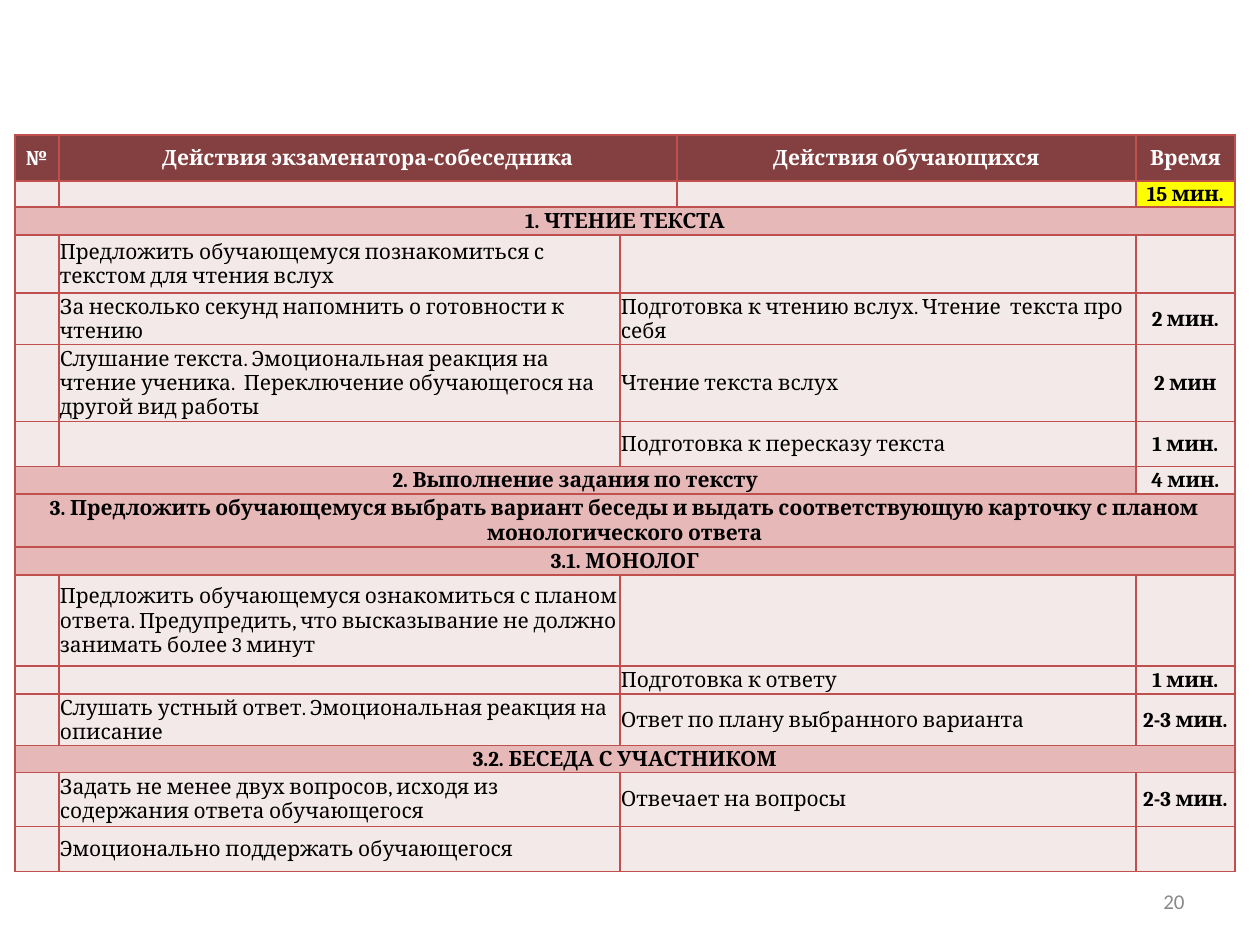
from typing import NamedTuple

from lxml.etree import SubElement
from pptx import Presentation
from pptx.dml.color import RGBColor as Rgb
from pptx.enum.text import MSO_ANCHOR as Anchor, PP_ALIGN as Align
from pptx.oxml.ns import qn
from pptx.util import Emu, Pt

SCALE = 914400 // 126
COLOR = {"head": "844040", "band": "E6B9B8", "pale": "F4E9E9", "mark": "FFFF00",
         "line": "C0504D", "white": "FFFFFF", "black": "000000", "gray": "898989"}
COLS = (44, 561, 57, 459, 99)


class Kind(NamedTuple):
    spans: tuple[tuple[int, int], ...]
    fills: tuple[str, ...]
    ink: str = "black"
    left: tuple[int, ...] = ()


class Row(NamedTuple):
    high: int
    kind: Kind
    texts: tuple[str, ...]


WIDE = ((0, 0), (1, 2), (3, 3), (4, 4))
HEAD = Kind(WIDE, ("head",) * 4, "white")
TOTAL = Kind(WIDE, ("pale", "pale", "pale", "mark"))
BAND = Kind(((0, 4),), ("band",))
TASK = Kind(((0, 3), (4, 4)), ("band", "pale"))
STEP = Kind(((0, 0), (1, 1), (2, 3), (4, 4)), ("pale",) * 4, left=(1, 2))

ROWS = (
    Row(46, HEAD, ("№", "Действия экзаменатора-собеседника", "Действия обучающихся", "Время")),
    Row(25, TOTAL, ("", "", "", "15 мин.")),
    Row(28, BAND, ("1. ЧТЕНИЕ ТЕКСТА",)),
    Row(58, STEP, ("", "Предложить обучающемуся познакомиться с текстом для чтения вслух", "", "")),
    Row(49, STEP, ("", "За несколько секунд напомнить о готовности к чтению",
                   "Подготовка к чтению вслух. Чтение  текста про себя", "2 мин.")),
    Row(74, STEP, ("", "Слушание текста. Эмоциональная реакция на чтение ученика.  "
                   "Переключение обучающегося на другой вид работы",
                   "Чтение текста вслух", "2 мин")),
    Row(45, STEP, ("", "", "Подготовка к пересказу текста", "1 мин.")),
    Row(28, TASK, ("2. Выполнение задания по тексту", "4 мин.")),
    Row(53, BAND, ("3. Предложить обучающемуся выбрать вариант беседы и выдать "
                   "соответствующую карточку с планом монологического ответа",)),
    Row(28, BAND, ("3.1. МОНОЛОГ",)),
    Row(91, STEP, ("", "Предложить обучающемуся ознакомиться с планом ответа. "
                   "Предупредить, что высказывание не должно занимать более 3 минут", "", "")),
    Row(28, STEP, ("", "", "Подготовка к ответу", "1 мин.")),
    Row(49, STEP, ("", "Слушать устный ответ. Эмоциональная реакция на описание",
                   "Ответ по плану выбранного варианта", "2-3 мин.")),
    Row(27, BAND, ("3.2. БЕСЕДА С УЧАСТНИКОМ",)),
    Row(54, STEP, ("", "Задать не менее двух вопросов, исходя из содержания ответа обучающегося",
                   "Отвечает на вопросы", "2-3 мин.")),
    Row(45, STEP, ("", "Эмоционально поддержать обучающегося", "", "")),
)


def px(count: int) -> Emu:
    return Emu(count * SCALE)


def write(para, text: str, face: str, ink: str, bold: bool, align: Align) -> None:
    para.text = text
    para.alignment = align
    for run in para.runs:
        font = run.font
        font.name, font.size, font.bold = face, Pt(12), bold
        font.color.rgb = Rgb.from_string(COLOR[ink])
    if not text:
        SubElement(para._p, qn("a:endParaRPr"), sz="1200")


def frame(cell) -> None:
    props = cell._tc.get_or_add_tcPr()
    for side in ("lnL", "lnR", "lnT", "lnB"):
        line = SubElement(props, qn(f"a:{side}"), w=str(Pt(1)))
        fill = SubElement(line, qn("a:solidFill"))
        SubElement(fill, qn("a:srgbClr"), val=COLOR["line"])


def paint(cell, fill: str) -> None:
    frame(cell)
    cell.fill.solid()
    cell.fill.fore_color.rgb = Rgb.from_string(COLOR[fill])
    cell.vertical_anchor = Anchor.MIDDLE
    cell.margin_left = cell.margin_right = cell.margin_top = px(1)
    cell.margin_bottom = 0


def fill_row(table, index: int, row: Row) -> None:
    table.rows[index].height = px(row.high)
    kind = row.kind
    for slot, ((first, last), fill, text) in enumerate(zip(kind.spans, kind.fills, row.texts)):
        for col in range(first, last + 1):
            paint(table.cell(index, col), fill)
            if col > first:
                write(table.cell(index, col).text_frame.paragraphs[0], "", "Cambria",
                      kind.ink, False, Align.LEFT)
        cell = table.cell(index, first)
        if last > first:
            cell.merge(table.cell(index, last))
        plain = slot in kind.left
        write(cell.text_frame.paragraphs[0], text, "Cambria", kind.ink, not plain,
              Align.LEFT if plain else Align.CENTER)


def add_plan(slide) -> None:
    high = sum(row.high for row in ROWS)
    table = slide.shapes.add_table(len(ROWS), len(COLS), px(15), px(135),
                                   px(sum(COLS)), px(high)).table
    table.first_row = table.horz_banding = False
    for col, wide in zip(table.columns, COLS):
        col.width = px(wide)
    for index, row in enumerate(ROWS):
        fill_row(table, index, row)


def add_page(slide) -> None:
    text = slide.shapes.add_textbox(px(903), px(876), px(294), px(50)).text_frame
    text.word_wrap = True
    text.vertical_anchor = Anchor.MIDDLE
    write(text.paragraphs[0], "20", "Calibri", "gray", False, Align.RIGHT)


def main() -> None:
    """Build the timed exam plan slide."""
    deck = Presentation()
    deck.slide_width, deck.slide_height = px(1260), px(945)
    slide = deck.slides.add_slide(deck.slide_layouts[6])
    add_page(slide)
    add_plan(slide)
    deck.save("out.pptx")


if __name__ == "__main__":
    main()
